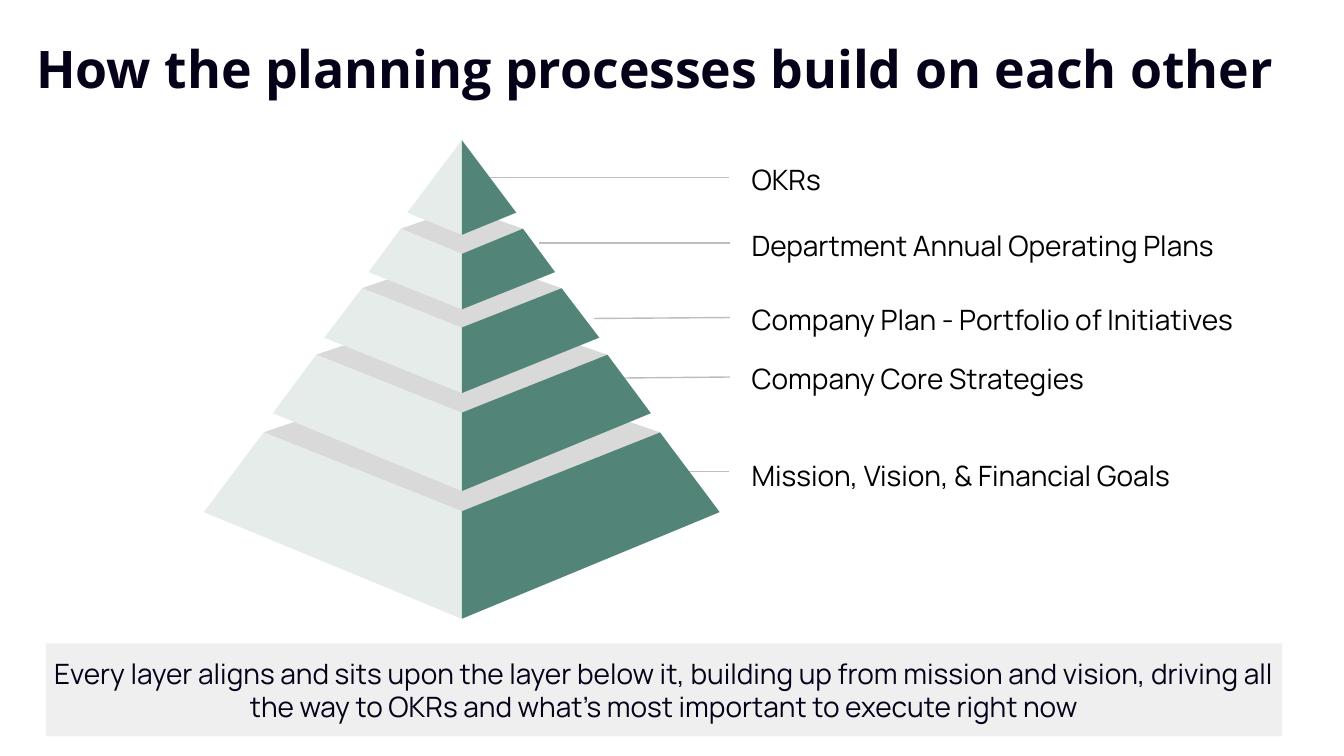
from pptx import Presentation
from pptx.dml.color import RGBColor
from pptx.enum.shapes import MSO_CONNECTOR as Conn, MSO_SHAPE as Shape
from pptx.enum.text import MSO_ANCHOR as Anchor, PP_ALIGN as Align
from pptx.oxml.ns import qn
from pptx.util import Pt
from lxml.etree import SubElement

INK, BLACK, BAND, RULE = "060119", "000000", "EFEFEF", "BDBDBD"
LID, LIGHT, DARK = "D9D9D9", "E5ECEA", "528577"
MID = 329.9  # centre line of the pyramid

# Tiers from the base up:
# shoulder half-width and y, lid peak y, inner y, foot half-width and y, tip y
TIERS = [
    (141.6, 308.9, 260.6, 365.2, 184.2, 365.8, 442),
    (104, 253.4, 218.2, 294.8, 135, 295.2, 350.8),
    (71.3, 205.9, 181.4, 234, 98.2, 241.2, 280.8),
    (43.7, 163.4, 148.3, 181.4, 66.6, 194.4, 221),
    (0, 100.1, 100.1, 100.1, 38.9, 151.9, 167.8),
]

# Labels: text, box top, box height, line start x and y, line end x and y
LABELS = [
    ("OKRs", 87.1, 78.5, 347, 126.7, 520.6, 126.7),
    ("Department Annual Operating Plans", 155.5, 35.3, 385.2, 173.5, 521.3, 173.5),
    ("Company Plan - Portfolio of Initiatives", 211, 30.2, 424.1, 227.5, 521.3, 226.8),
    ("Company Core Strategies", 244.8, 46.8, 445.7, 270, 521.3, 269.3),
    ("Mission, Vision, & Financial Goals", 298.1, 78.5, 456.5, 337, 520.6, 337),
]


def tint(code):
    return RGBColor.from_string(code)


class Deck:
    def __init__(self):
        self.prs = Presentation()
        self.prs.slide_width, self.prs.slide_height = Pt(960), Pt(540)
        self.slide = self.prs.slides.add_slide(self.prs.slide_layouts[6])
        self.shapes = self.slide.shapes
        self.font = "Manrope"
        self.size = 20

    def paint(self, shape, fill):
        shape.shadow.inherit = False
        shape.fill.solid()
        shape.fill.fore_color.rgb = tint(fill)
        shape.line.fill.background()

    def letter(self, shape, text, color, pad=0, anchor=Anchor.MIDDLE,
               align=Align.LEFT, font=None, size=None, bold=False, gap=None):
        frame = shape.text_frame
        frame.word_wrap = True
        frame.vertical_anchor = anchor
        frame.margin_left = frame.margin_right = Pt(pad)
        frame.margin_top = frame.margin_bottom = Pt(pad)
        para = frame.paragraphs[0]
        para.text = text
        para.alignment = align
        para.line_spacing = gap
        para.font.name = font or self.font
        para.font.size = Pt(size or self.size)
        para.font.bold = bold
        para.font.color.rgb = tint(color)

    def text(self, x, y, w, h, words, color, **style):
        box = self.shapes.add_textbox(Pt(x), Pt(y), Pt(w), Pt(h))
        self.letter(box, words, color, **style)

    def banner(self, x, y, w, h, words, fill, color):
        box = self.shapes.add_shape(Shape.RECTANGLE, Pt(x), Pt(y), Pt(w), Pt(h))
        self.paint(box, fill)
        self.letter(box, words, color, align=Align.CENTER)

    def line(self, x1, y1, x2, y2, color):
        line = self.shapes.add_connector(
            Conn.STRAIGHT, Pt(x1), Pt(y1), Pt(x2), Pt(y2))
        line.line.color.rgb = tint(color)
        line.line.width = Pt(1)
        SubElement(line._element.spPr, qn("a:effectLst"))

    def face(self, points, fill):
        spots = [(Pt(x), Pt(y)) for x, y in points]
        pen = self.shapes.build_freeform(*spots[0])
        pen.add_line_segments(spots[1:], close=True)
        self.paint(pen.convert_to_shape(), fill)

    def tier(self, top, brow, peak, inner, foot, base, tip):
        if top:
            self.face([(MID - top, brow), (MID, inner),
                       (MID + top, brow), (MID, peak)], LID)
        for side, fill in ((-1, LIGHT), (1, DARK)):
            self.face([(MID + side * top, brow), (MID, inner), (MID, tip),
                       (MID + side * foot, base)], fill)


def main():
    deck = Deck()

    # Title and closing banner
    deck.text(25.9, 26.6, 906.5, 41, "How the planning processes build on each other",
              INK, anchor=Anchor.TOP, font="Open Sans", size=37, bold=True)
    deck.banner(32.8, 459.6, 883, 66.5,
                "Every layer aligns and sits upon the layer below it, building up "
                "from mission and vision, driving all the way to OKRs and what’s "
                "most important to execute right now", BAND, INK)

    # Labels with their leader lines, behind the pyramid
    for words, y, h, *ends in LABELS:
        deck.line(*ends, RULE)
        deck.text(527.8, y, 390, h, words, BLACK, pad=9, gap=1.15)

    # Pyramid
    for tier in TIERS:
        deck.tier(*tier)

    deck.prs.save("out.pptx")


if __name__ == "__main__":
    main()
